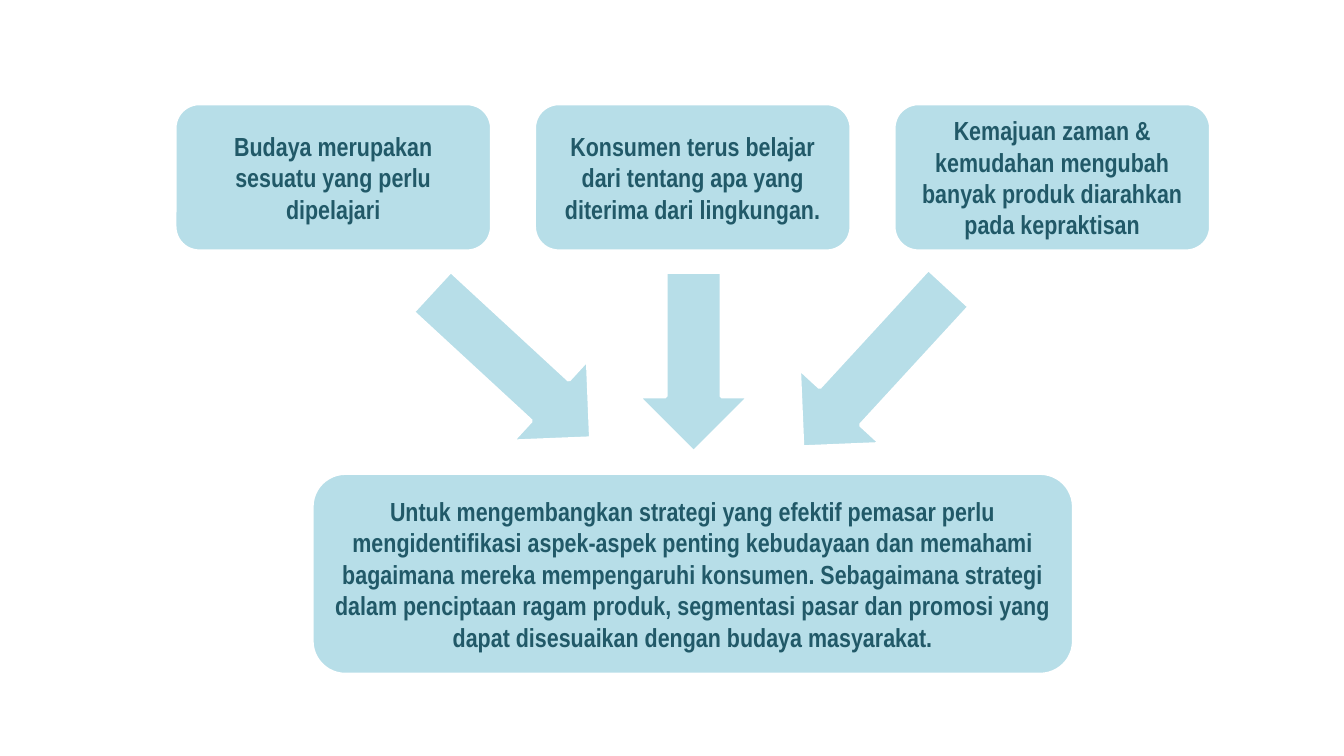
from pptx import Presentation
from pptx.dml.color import RGBColor
from pptx.enum.shapes import MSO_SHAPE
from pptx.enum.text import MSO_ANCHOR, PP_ALIGN
from pptx.util import Inches, Pt

COLOURS = {"panel": "B7DEE8", "outline": "FFFFFF", "text": "215968"}
FONT = "Arial Narrow"

CAUSES = [
    "Budaya merupakan sesuatu yang perlu dipelajari",
    "Konsumen terus belajar dari tentang apa yang diterima dari lingkungan.",
    "Kemajuan zaman & kemudahan mengubah banyak produk diarahkan pada kepraktisan",
]
CONCLUSION = (
    "Untuk mengembangkan strategi yang efektif pemasar perlu "
    "mengidentifikasi aspek-aspek penting kebudayaan dan memahami "
    "bagaimana mereka mempengaruhi konsumen. Sebagaimana strategi "
    "dalam penciptaan ragam produk, segmentasi pasar dan promosi yang "
    "dapat disesuaikan dengan budaya masyarakat."
)


def colour(name):
    return RGBColor.from_string(COLOURS[name])


def add_panel(page, kind, left, top, width, height):
    panel = page.shapes.add_shape(
        kind, Inches(left), Inches(top), Inches(width), Inches(height)
    )
    panel.shadow.inherit = False
    panel.fill.solid()
    panel.fill.fore_color.rgb = colour("panel")
    panel.line.color.rgb = colour("outline")
    panel.line.width = Pt(2)
    return panel


def add_statement(page, text, left, top, width, height):
    box = add_panel(page, MSO_SHAPE.ROUNDED_RECTANGLE, left, top, width, height)
    frame = box.text_frame
    frame.word_wrap = True
    frame.vertical_anchor = MSO_ANCHOR.MIDDLE
    para = frame.paragraphs[0]
    para.alignment = PP_ALIGN.CENTER
    para.space_after = Pt(6)
    span = para.add_run()
    span.text = text
    span.font.name = FONT
    span.font.size = Pt(14)
    span.font.bold = True
    span.font.color.rgb = colour("text")


def add_causes(page, left, top, width, height):
    box_width = 2.36
    step = (width - box_width) / (len(CAUSES) - 1)
    for index, text in enumerate(CAUSES):
        add_statement(page, text, left + index * step, top, box_width, height)


def add_arrows(page, left, top):
    thickness = 0.83
    arrows = [
        (0, 0.02, 1.61, 42.7),
        (1.49, 0, 1.34, 90),
        (2.71, 0.04, 1.61, 132.6),
    ]
    for across, down, length, angle in arrows:
        arrow = add_panel(
            page, MSO_SHAPE.RIGHT_ARROW, left + across, top + down, length, thickness
        )
        arrow.rotation = angle


def main():
    deck = Presentation()
    deck.slide_width = Inches(10)
    deck.slide_height = Inches(10 * 9 / 16)
    page = deck.slides.add_slide(deck.slide_layouts[6])
    add_causes(page, 1.3, 0.77, 7.71, 1.1)
    add_arrows(page, 3, 2.28)
    add_statement(page, CONCLUSION, 2.32, 3.52, 5.67, 1.5)
    deck.save("out.pptx")


if __name__ == "__main__":
    main()
